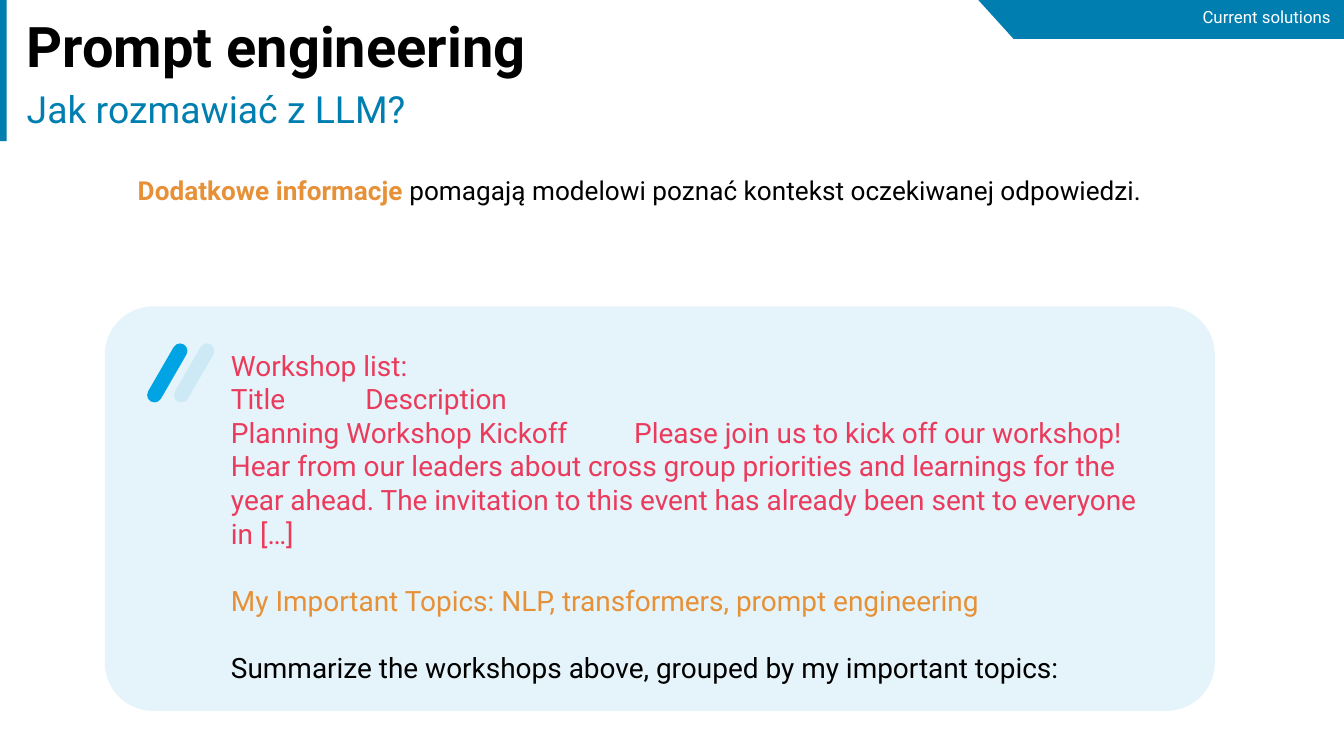
from pptx import Presentation
from pptx.dml.color import RGBColor
from pptx.enum.shapes import MSO_SHAPE
from pptx.enum.text import MSO_ANCHOR, MSO_AUTO_SIZE, PP_ALIGN
from pptx.util import Inches, Pt

LEFT, CENTER, RIGHT = PP_ALIGN.LEFT, PP_ALIGN.CENTER, PP_ALIGN.RIGHT
TRAPEZOID, RECTANGLE, ROUNDED = (
    MSO_SHAPE.TRAPEZOID, MSO_SHAPE.RECTANGLE, MSO_SHAPE.ROUNDED_RECTANGLE)
TOP, NO_AUTOFIT = MSO_ANCHOR.TOP, MSO_AUTO_SIZE.NONE

FONT = "Roboto"
BLUE, BLACK, WHITE = "007EB0", "000000", "FFFFFF"
ORANGE, RED = "E69138", "EB3B5D"
PANEL, BRIGHT, PALE = "E5F4FA", "00A4E4", "CCE9F5"

SECTION = [[("Current solutions", WHITE, False)]]
HEADING = [[("Prompt engineering", BLACK, True)]]
SUBHEADING = [[("Jak rozmawiać z LLM?", BLUE, False)]]
INTRO = [[
    ("Dodatkowe informacje ", ORANGE, True),
    ("pomagają modelowi poznać kontekst oczekiwanej odpowiedzi.", BLACK, False),
]]
PROMPT_PARTS = [
    [[("Workshop list:", RED, False)],
     [("Title\tDescription", RED, False)],
     [("Planning Workshop Kickoff\tPlease join us to kick off our workshop! "
       "Hear from our leaders about cross group priorities and learnings for "
       "the year ahead. The invitation to this event has already been sent to "
       "everyone in […]", RED, False)]],
    [[("My Important Topics: NLP, transformers, prompt engineering", ORANGE, False)]],
    [[("Summarize the workshops above, grouped by my important topics:", BLACK, False)]],
]
PART_GAP = 18
TAB_STEP = Inches(1)

BANNER = [
    (TRAPEZOID, (7.27, -0.01, 2.72, 0.3), BLUE, 0.906, 180),
    (RECTANGLE, (9.69, -0.01, 0.31, 0.3), BLUE, None, 0),
    (RECTANGLE, (0, -0.01, 0.05, 1.06), BLUE, None, 0),
]
PROMPT_PANEL = (ROUNDED, (0.78, 2.28, 8.26, 3.01), PANEL, 0.12, 0)
STROKE_COLORS = [BRIGHT, PALE]
STROKE_LEFT, STROKE_STEP = 1.19, 0.2


def rgb(value):
    return RGBColor.from_string(value)


def add_block(slide, kind, box, color, adjustment, rotation):
    block = slide.shapes.add_shape(kind, *map(Inches, box))
    block.shadow.inherit = False
    block.fill.solid()
    block.fill.fore_color.rgb = rgb(color)
    block.line.fill.background()
    block.rotation = rotation
    if adjustment is not None:
        block.adjustments[0] = adjustment


def write(holder, box, parts, size, align=LEFT, margin=0.05):
    holder.left, holder.top, holder.width, holder.height = map(Inches, box)
    frame = holder.text_frame
    frame.word_wrap = True
    frame.auto_size = NO_AUTOFIT
    frame.vertical_anchor = TOP
    frame.margin_left = frame.margin_right = Inches(0.1)
    frame.margin_top = frame.margin_bottom = Inches(margin)
    first = True
    for part in parts:
        for position, runs in enumerate(part):
            paragraph = frame.paragraphs[0] if first else frame.add_paragraph()
            starts_part = position == 0 and not first
            paragraph.space_before = Pt(PART_GAP if starts_part else 0)
            paragraph.alignment = align
            paragraph._p.get_or_add_pPr().set("defTabSz", str(TAB_STEP))
            for text, color, bold in runs:
                run = paragraph.add_run()
                run.text = text
                run.font.name = FONT
                run.font.size = Pt(size)
                run.font.bold = bold
                run.font.color.rgb = rgb(color)
            first = False


def add_text(slide, box, parts, size, **layout):
    holder = slide.shapes.add_textbox(*map(Inches, box))
    write(holder, box, parts, size, **layout)


def main():
    deck = Presentation()
    deck.slide_width = Inches(10)
    deck.slide_height = deck.slide_width * 9 // 16
    slide = deck.slides.add_slide(deck.slide_layouts[5])
    slide.background.fill.solid()
    slide.background.fill.fore_color.rgb = rgb(WHITE)

    for block in BANNER:
        add_block(slide, *block)
    add_text(slide, (0.1, 0.04, 7.42, 0.54), [HEADING], 30)
    add_text(slide, (0.1, 0.59, 7.78, 0.37), [SUBHEADING], 20)

    section = slide.shapes.title
    slide.shapes._spTree.append(section._element)
    write(section, (7.5, 0, 2.5, 0.29), [SECTION], 9, align=RIGHT)

    add_text(slide, (0.32, 1.2, 8.88, 0.44), [INTRO], 14, align=CENTER, margin=0.1)
    add_block(slide, *PROMPT_PANEL)
    add_text(slide, (1.62, 2.49, 7.01, 2.73), PROMPT_PARTS, 15, margin=0.1)
    for index, color in enumerate(STROKE_COLORS):
        left = STROKE_LEFT + index * STROKE_STEP
        add_block(slide, ROUNDED, (left, 2.53, 0.11, 0.49), color, 0.5, 30)

    deck.save("out.pptx")


if __name__ == "__main__":
    main()
